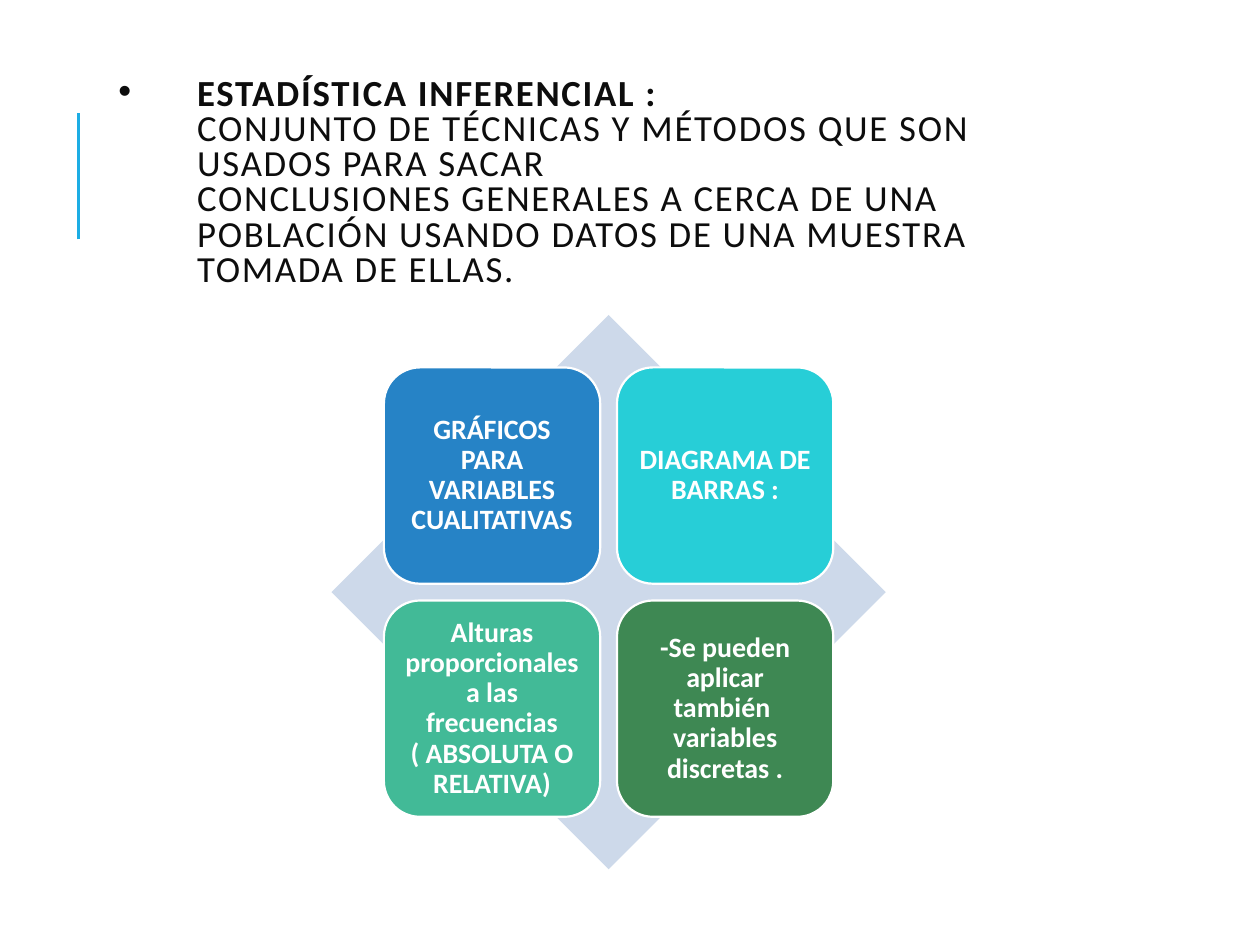
"""Build the slide on inferential statistics with its four-tile diamond matrix."""
from copy import deepcopy
from dataclasses import dataclass

from lxml.etree import SubElement
from pptx import Presentation
from pptx.dml.color import RGBColor
from pptx.enum.shapes import MSO_CONNECTOR, MSO_SHAPE
from pptx.enum.text import MSO_ANCHOR, MSO_AUTO_SIZE, PP_ALIGN
from pptx.oxml.ns import qn
from pptx.shapes.autoshape import Shape
from pptx.slide import Slide
from pptx.text.text import _Run
from pptx.util import Pt

FONT = "Calibri"
WHITE = RGBColor(0xFF, 0xFF, 0xFF)
INK = RGBColor(0x0D, 0x0D, 0x0D)
ACCENT = RGBColor(0x1C, 0xAD, 0xE4)
PALE_BLUE = RGBColor(0xCD, 0xD9, 0xEA)
BLUE = RGBColor(0x26, 0x83, 0xC6)
CYAN = RGBColor(0x27, 0xCE, 0xD7)
TEAL = RGBColor(0x42, 0xBA, 0x97)
GREEN = RGBColor(0x3E, 0x88, 0x53)

DIAMOND_LEFT, DIAMOND_TOP, DIAMOND_SIZE = 189.4, 180, 316.8
TILE_SIZE, TILE_GAP = 123.6, 9.6
TILE_MARGIN = (DIAMOND_SIZE - 2 * TILE_SIZE - TILE_GAP) / 2

DEFINITION = (
    "ESTADÍSTICA INFERENCIAL :\v"
    "CONJUNTO DE TÉCNICAS Y MÉTODOS QUE SON USADOS PARA SACAR\v"
    "CONCLUSIONES GENERALES A CERCA DE UNA POBLACIÓN USANDO DATOS "
    "DE UNA MUESTRA TOMADA DE ELLAS."
)


@dataclass(frozen=True)
class Tile:
    """A rounded tile of the matrix."""
    text: str
    color: RGBColor


TILES = [
    Tile("GRÁFICOS PARA VARIABLES CUALITATIVAS", BLUE),
    Tile("DIAGRAMA DE BARRAS :", CYAN),
    Tile("Alturas proporcionales a las frecuencias ( ABSOLUTA O RELATIVA)", TEAL),
    Tile("-Se pueden aplicar también  variables discretas .", GREEN),
]


def format_run(run: _Run, size: float, color: RGBColor, bold: bool) -> None:
    """Set the font of a run."""
    run.font.name = FONT
    run.font.size = Pt(size)
    run.font.bold = bold
    run.font.color.rgb = color


def add_accent(slide: Slide) -> None:
    """Draw the vertical rule beside the title."""
    accent = slide.shapes.add_connector(
        MSO_CONNECTOR.STRAIGHT, Pt(44.8), Pt(136.8), Pt(44.8), Pt(64.8))
    accent.line.color.rgb = ACCENT
    accent.line.width = Pt(1.5)
    SubElement(accent._element.spPr, qn("a:effectLst"))


def fill_title(title: Shape) -> None:
    """Write the bulleted definition into the title placeholder."""
    title.left, title.top, title.width, title.height = Pt(60.5), Pt(46), Pt(574), Pt(118)
    frame = title.text_frame
    frame.auto_size = MSO_AUTO_SIZE.NONE
    frame.vertical_anchor = MSO_ANCHOR.MIDDLE
    definition = frame.paragraphs[0]
    definition.text = DEFINITION
    definition.alignment = PP_ALIGN.LEFT
    definition.line_spacing = 0.8
    for index, run in enumerate(definition.runs):
        format_run(run, 21, INK, bold=index == 0)
        run.font._element.set("spc", "100")
    for line_break in definition._p.findall(qn("a:br")):
        line_break.append(deepcopy(definition.runs[0].font._element))
    properties = definition._p.get_or_add_pPr()
    properties.set("marL", str(Pt(45)))
    properties.set("indent", str(Pt(-45)))
    SubElement(properties, qn("a:buFont"), typeface="Arial")
    SubElement(properties, qn("a:buChar"), char="•")


def add_diamond(slide: Slide) -> None:
    """Draw the diamond behind the tiles."""
    diamond = slide.shapes.add_shape(
        MSO_SHAPE.DIAMOND, Pt(DIAMOND_LEFT), Pt(DIAMOND_TOP),
        Pt(DIAMOND_SIZE), Pt(DIAMOND_SIZE))
    diamond.shadow.inherit = False
    diamond.fill.solid()
    diamond.fill.fore_color.rgb = PALE_BLUE
    diamond.line.fill.background()


def add_tile(slide: Slide, tile: Tile, row: int, column: int) -> None:
    """Draw one tile at its place in the two-by-two grid."""
    pitch = TILE_SIZE + TILE_GAP
    box = slide.shapes.add_shape(
        MSO_SHAPE.ROUNDED_RECTANGLE,
        Pt(DIAMOND_LEFT + TILE_MARGIN + column * pitch),
        Pt(DIAMOND_TOP + TILE_MARGIN + row * pitch),
        Pt(TILE_SIZE), Pt(TILE_SIZE))
    box.shadow.inherit = False
    box.fill.solid()
    box.fill.fore_color.rgb = tile.color
    box.line.color.rgb = WHITE
    box.line.width = Pt(1.25)
    frame = box.text_frame
    frame.word_wrap = True
    frame.vertical_anchor = MSO_ANCHOR.MIDDLE
    frame.margin_left = frame.margin_right = Pt(4.8)
    frame.margin_top = frame.margin_bottom = Pt(4.8)
    label = frame.paragraphs[0]
    label.text = tile.text
    label.alignment = PP_ALIGN.CENTER
    label.line_spacing = 0.9
    format_run(label.runs[0], 16, WHITE, bold=True)


def main() -> None:
    """Assemble and save the presentation."""
    presentation = Presentation()
    presentation.slide_width, presentation.slide_height = Pt(720), Pt(540)
    slide = presentation.slides.add_slide(presentation.slide_layouts[5])
    add_accent(slide)
    fill_title(slide.shapes.title)
    add_diamond(slide)
    for index, tile in enumerate(TILES):
        row, column = divmod(index, 2)
        add_tile(slide, tile, row, column)
    presentation.save("out.pptx")


if __name__ == "__main__":
    main()
